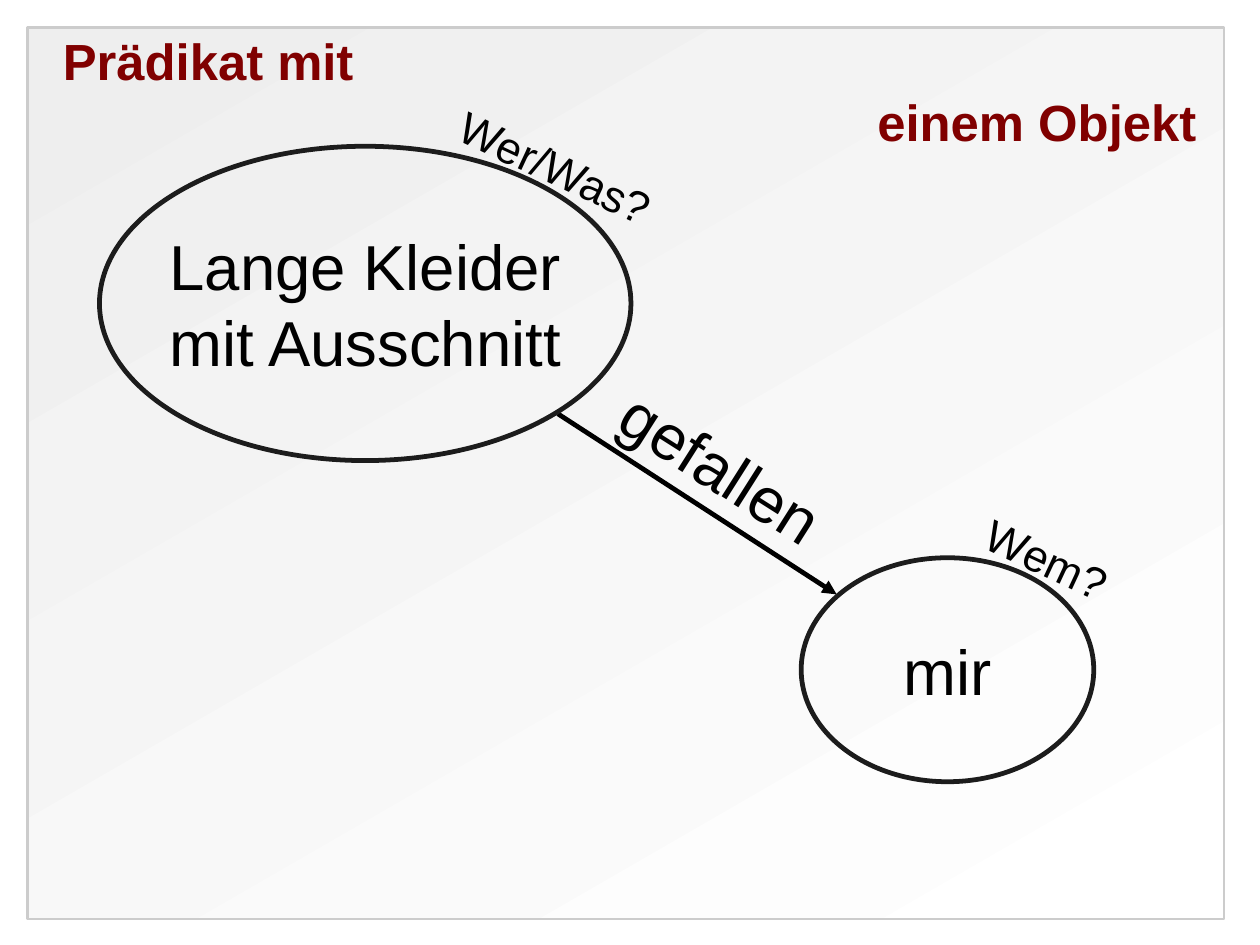
from pptx import Presentation
from pptx.dml.color import RGBColor
from pptx.enum.shapes import MSO_CONNECTOR as CONN, MSO_SHAPE as SHAPE
from pptx.enum.text import MSO_ANCHOR as ANCHOR, PP_ALIGN as ALIGN
from pptx.oxml.ns import qn
from pptx.util import Inches, Pt
from lxml import etree

BLACK = RGBColor(0x00, 0x00, 0x00)
OUTLINE = RGBColor(0x1C, 0x1C, 0x1C)
MAROON = RGBColor(0x80, 0x00, 0x00)
FRAME = RGBColor(0xCC, 0xCC, 0xCC)
PANEL = (RGBColor(0xEE, 0xEE, 0xEE), RGBColor(0xFF, 0xFF, 0xFF))
CM_PER_INCH = 2.54


def write(tf, lines, size, color=BLACK, bold=False, insets=(0.1, 0.05)):
    """Fill a text frame with one paragraph per (text, alignment) pair."""
    tf.margin_left = tf.margin_right = Inches(insets[0])
    tf.margin_top = tf.margin_bottom = Inches(insets[1])
    for i, (text, align) in enumerate(lines):
        p = tf.paragraphs[0] if i == 0 else tf.add_paragraph()
        p.alignment = align
        r = p.add_run()
        r.text = text
        r.font.name = "Arial"
        r.font.size = Pt(size)
        r.font.bold = bold
        r.font.color.rgb = color


def add_panel(s, box):
    """Draw the framed gradient panel behind the diagram."""
    sp = s.shapes.add_shape(SHAPE.RECTANGLE, *map(Inches, box))
    sp.shadow.inherit = False
    sp.fill.gradient()
    sp.fill.gradient_angle = 300
    for stop, color, position in zip(sp.fill.gradient_stops, PANEL, (0, 1)):
        stop.color.rgb = color
        stop.position = position
    sp.line.color.rgb = FRAME
    sp.line.width = Pt(1.5)


def add_title(s, box):
    """Place the title with its first line left and its second line right."""
    tf = s.shapes.add_textbox(*map(Inches, box)).text_frame
    tf.word_wrap = True
    tf.vertical_anchor = ANCHOR.MIDDLE
    lines = [("Prädikat mit", ALIGN.LEFT), ("einem Objekt", ALIGN.RIGHT)]
    write(tf, lines, 32, MAROON, True, (0, 0))


def add_arrow(s, start, end):
    """Draw the verb arrow from subject to object."""
    line = s.shapes.add_connector(CONN.STRAIGHT, *map(Inches, start + end))
    line.line.color.rgb = BLACK
    line.line.width = Pt(3)
    ln = line._element.spPr.find(qn("a:ln"))
    etree.SubElement(ln, qn("a:tailEnd"), type="triangle")
    etree.SubElement(line._element.spPr, qn("a:effectLst"))


def add_node(s, box, lines):
    """Draw an unfilled ellipse with centred lines of text."""
    sp = s.shapes.add_shape(SHAPE.OVAL, *map(Inches, box))
    sp.shadow.inherit = False
    sp.fill.background()
    sp.line.color.rgb = OUTLINE
    sp.line.width = Pt(3)
    tf = sp.text_frame
    tf.word_wrap = False
    tf.vertical_anchor = ANCHOR.MIDDLE
    write(tf, [(text, ALIGN.CENTER) for text in lines], 40, insets=(0.12, 0.07))


def add_label(s, box, text, size, angle, wrap=True):
    """Place a rotated label."""
    sp = s.shapes.add_textbox(*map(Inches, box))
    sp.rotation = angle
    sp.text_frame.word_wrap = wrap
    write(sp.text_frame, [(text, ALIGN.LEFT)], size)


def main():
    """Build and save the slide."""
    prs = Presentation()
    prs.slide_width = Inches(28 / CM_PER_INCH)
    prs.slide_height = Inches(21 / CM_PER_INCH)
    s = prs.slides.add_slide(prs.slide_layouts[6])
    add_panel(s, (0.24, 0.24, 10.47, 7.8))
    add_title(s, (0.55, 0.29, 9.92, 1))
    add_arrow(s, (4.88, 3.62), (7.32, 5.2))
    add_node(s, (0.87, 1.28, 4.65, 2.75), ["Lange Kleider", "mit Ausschnitt"])
    add_label(s, (3.87, 1.18, 2, 0.56), "Wer/Was?", 28, 25)
    add_node(s, (7.01, 4.88, 2.56, 1.96), ["mir"])
    add_label(s, (8.51, 4.62, 1.38, 0.53), "Wem?", 28, 25)
    add_label(s, (5.24, 3.71, 2.17, 0.77), "gefallen", 40, 32.4, wrap=False)
    prs.save("out.pptx")


if __name__ == "__main__":
    main()
